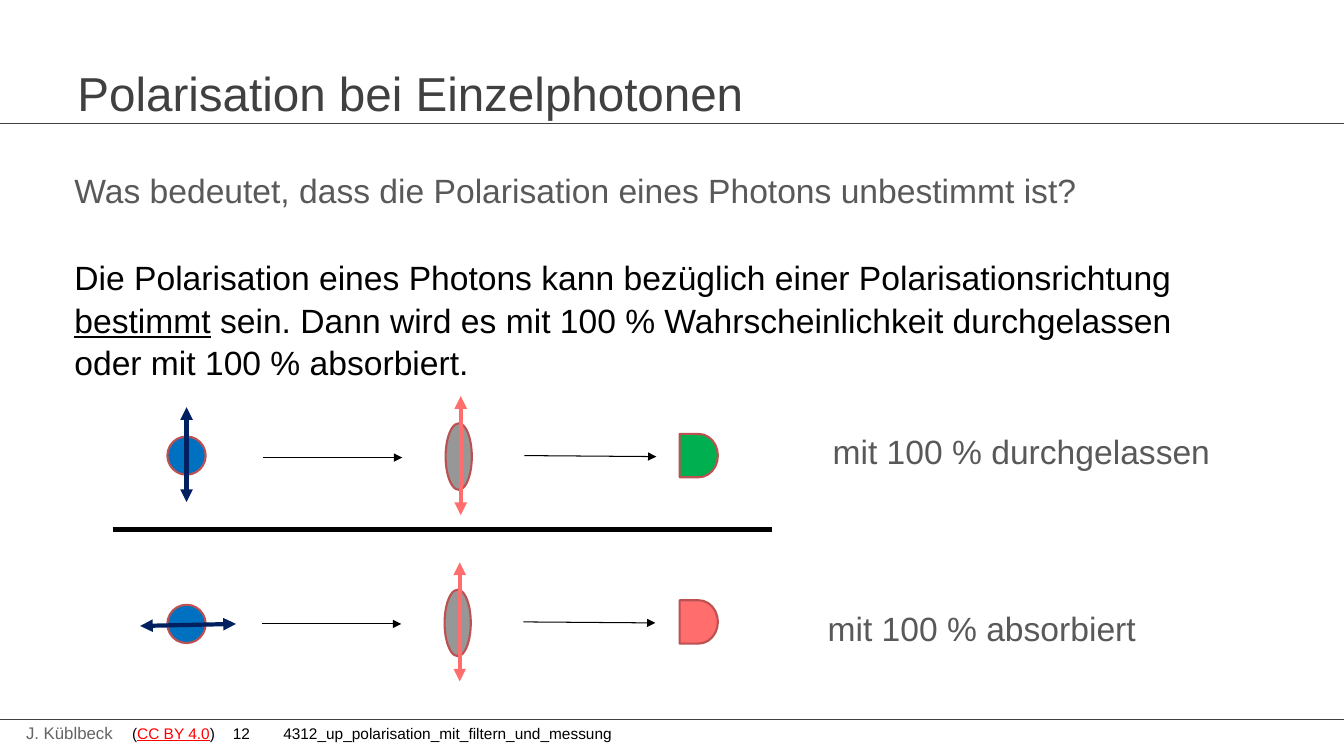
import pptx
import pptx.util
import pptx.dml.color
import pptx.enum.shapes
import pptx.enum.text
import pptx.oxml.ns
import lxml.etree

THEME = {
    "font": "Arial",
    "size": {"title": 34, "body": 24, "name": 12, "foot": 11},
    "color": {
        "title": "404040", "grey": "595959", "name": "646464", "black": "000000",
        "red": "FF0000", "rule": "404040", "edge": "BD5151", "blue": "0070C0",
        "navy": "002060", "lens": "979797", "pink": "FF6D6D", "green": "00B050",
    },
}

TEXTS = [
    {"box": (0.67, 0.6, 12, 0.63), "size": "title", "mid": True,
     "paras": [{"runs": [("Polarisation bei Einzelphotonen", "title", False)]}]},
    {"box": (0.52, 1.62, 12.54, 5.12), "size": "body", "paras": [
        {"indent": 0.12, "before": 3, "lines": 1.05, "runs": [
            ("Was bedeutet, dass die Polarisation eines Photons unbestimmt ist?",
             "grey", False)]},
        {"indent": 0.12, "before": 32, "lines": 1.05, "runs": [
            ("Die Polarisation eines Photons kann bezüglich einer "
             "Polarisationsrichtung ", "black", False),
            ("bestimmt", "black", True),
            (" sein. Dann wird es mit 100 % Wahrscheinlichkeit durchgelassen "
             "\voder mit 100 % absorbiert.", "black", False)]}]},
    {"box": (0.16, 7.12, 1.55, 0.3), "size": "name",
     "paras": [{"runs": [("J. Küblbeck", "name", False)]}]},
    {"box": (1.31, 7.18, 11.73, 0.19), "size": "foot", "inset": 0, "paras": [
        {"tabs": (5, 8), "runs": [
            ("(", "black", False), ("CC BY 4.0", "red", True),
            (")\t12\t4312_up_polarisation_mit_filtern_und_messung",
             "black", False)]}]},
]

RULES = [
    ((0, 7.14, 13.33, 7.14), "rule", 0.75),
    ((0, 1.23, 13.33, 1.23), "rule", 0.75),
    ((1.12, 5.25, 7.66, 5.25), "black", 3.75),
]

ROWS = [
    {"mid": 4.53, "shift": 0, "ball": 4.52, "spin": (1.85, 4.04, 1.85, 4.98),
     "gate": "green", "label": "mit 100 % durchgelassen", "spot": (7.71, 4.23)},
    {"mid": 6.18, "shift": -0.01, "ball": 6.19, "spin": (2.34, 6.19, 1.39, 6.21),
     "gate": "pink", "label": "mit 100 % absorbiert", "spot": (7.66, 5.98)},
]

INCH = pptx.util.Inches
POINT = pptx.util.Pt
KIND = pptx.enum.shapes.MSO_SHAPE
qn = pptx.oxml.ns.qn


def tint(name):
    return pptx.dml.color.RGBColor.from_string(THEME["color"][name])


def style(item, form):
    for key, val in form.items():
        setattr(item, key, val)


def write(slide, text):
    frame = slide.shapes.add_textbox(*map(INCH, text["box"])).text_frame
    anchor = pptx.enum.text.MSO_ANCHOR
    style(frame, {"word_wrap": True,
                  "vertical_anchor": anchor.MIDDLE if text.get("mid") else anchor.TOP})
    if "inset" in text:
        style(frame, {"margin_" + side: INCH(text["inset"])
                      for side in ("left", "top", "right", "bottom")})
    for num, part in enumerate(text["paras"]):
        para = frame.add_paragraph() if num else frame.paragraphs[0]
        style(para, {"space_before": POINT(part.get("before", 0)),
                     "line_spacing": part.get("lines", 1.0)})
        props = para._p.get_or_add_pPr()
        props.set("marL", str(INCH(part.get("indent", 0))))
        props.set("indent", "0")
        if "tabs" in part:
            stops = lxml.etree.SubElement(props, qn("a:tabLst"))
            for stop in part["tabs"]:
                lxml.etree.SubElement(stops, qn("a:tab"), pos=str(INCH(stop)), algn="l")
        for words, color, under in part["runs"]:
            for num_piece, piece in enumerate(words.split("\v")):
                if num_piece:
                    para.add_line_break()
                run = para.add_run()
                run.text = piece
                style(run.font, {"name": THEME["font"], "underline": under,
                                 "size": POINT(THEME["size"][text["size"]])})
                run.font.color.rgb = tint(color)


def draw(slide, ends, color, width, heads=()):
    line = slide.shapes.add_connector(
        pptx.enum.shapes.MSO_CONNECTOR.STRAIGHT, *map(INCH, ends))
    line.line.width = POINT(width)
    line.line.color.rgb = tint(color)
    props = line._element.spPr
    for head in heads:
        lxml.etree.SubElement(props.find(qn("a:ln")), qn("a:" + head), type="triangle")
    lxml.etree.SubElement(props, qn("a:effectLst"))


def place(slide, kind, left, mid, wide, high, color):
    shape = slide.shapes.add_shape(
        kind, *map(INCH, (left, mid - high / 2, wide, high)))
    shape.shadow.inherit = False
    shape.fill.solid()
    shape.fill.fore_color.rgb = tint(color)
    shape.line.color.rgb = tint("edge")
    shape.line.width = POINT(1.5)


def show(slide, row):
    mid, shift = row["mid"], row["shift"]
    one, both = ("tailEnd",), ("headEnd", "tailEnd")
    place(slide, KIND.OVAL, 1.66, row["ball"], 0.38, 0.38, "blue")
    draw(slide, row["spin"], "navy", 3, both)
    place(slide, KIND.OVAL, 4.42 + shift, mid, 0.26, 0.66, "lens")
    draw(slide, (2.61 + shift, mid + 0.01, 3.99 + shift, mid + 0.01), "black", 0.75, one)
    draw(slide, (4.57 + shift, mid - 0.6, 4.57 + shift, mid + 0.58), "pink", 3, both)
    draw(slide, (5.2 + shift, mid - 0.01, 6.51 + shift, mid), "black", 0.75, one)
    place(slide, KIND.FLOWCHART_DELAY, 6.74, mid - 0.01, 0.38, 0.43, row["gate"])
    write(slide, {"box": (*row["spot"], 4.59, 0.75), "size": "body", "paras": [
        {"indent": 0.45, "before": 3, "runs": [(row["label"], "grey", False)]}]})


def main():
    deck = pptx.Presentation()
    style(deck, {"slide_width": INCH(13.33), "slide_height": INCH(7.5)})
    slide = deck.slides.add_slide(deck.slide_layouts[6])
    for text in TEXTS:
        write(slide, text)
    for rule in RULES:
        draw(slide, *rule)
    for row in ROWS:
        show(slide, row)
    deck.save("out.pptx")


if __name__ == "__main__":
    main()
